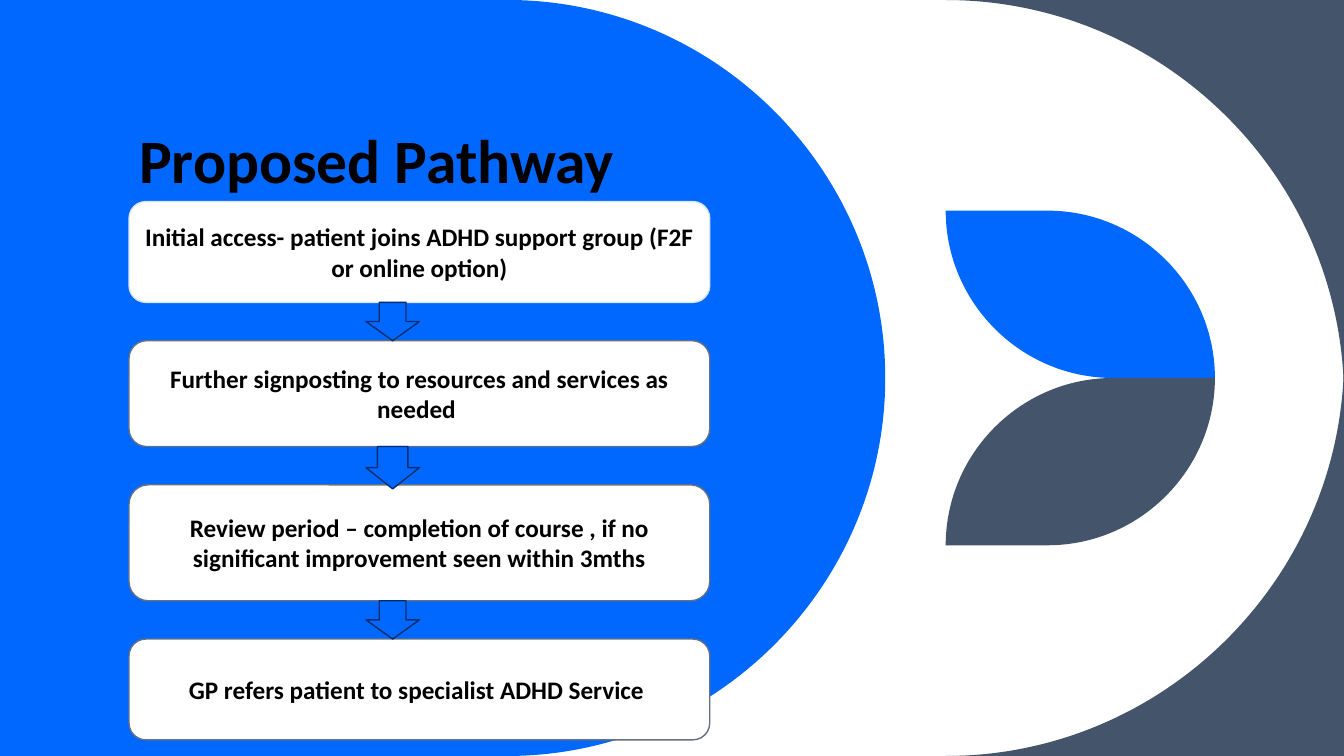
from lxml import etree
from pptx import Presentation
from pptx.dml.color import RGBColor
from pptx.enum.shapes import MSO_SHAPE as SHAPE
from pptx.enum.text import MSO_ANCHOR as ANCHOR, MSO_AUTO_SIZE as AUTO_SIZE, PP_ALIGN as ALIGN
from pptx.oxml.ns import qn
from pptx.util import Inches, Pt

WIDTH, HEIGHT = 13.33, 7.5
MIDDLE = HEIGHT / 2
ROUNDNESS = 0.55  # share of the way to the corner that makes a curve a quarter circle
BLUE, SLATE, WHITE, BLACK = "0068FF", "44546A", "FFFFFF", "000000"
PALE_EDGE, GREY_EDGE, NAVY_EDGE = "DAE5EF", "637183", "002E70"

# Text, height and outline of each step
STEPS = [
    ("Initial access- patient joins ADHD support group (F2F or online option)", 1, PALE_EDGE),
    ("Further signposting to resources and services as needed ", 1.05, GREY_EDGE),
    ("Review period – completion of course , if no significant improvement seen within 3mths",
     1.15, GREY_EDGE),
    ("GP refers patient to specialist ADHD Service ", 1, GREY_EDGE),
]
# Extra length and shaft share of the arrow after each step
ARROWS = [(0, 0.5), (0.04, 0.57), (0, 0.5)]


def color(value):
    return RGBColor.from_string(value)


def paint(shape, fill, line=None):
    shape.shadow.inherit = False
    shape.fill.solid()
    shape.fill.fore_color.rgb = color(fill)
    if line:
        shape.line.color.rgb = color(line)
        shape.line.width = Pt(1)
    else:
        shape.line.fill.background()


def write(shape, text, size=18, align=ALIGN.CENTER, anchor=ANCHOR.MIDDLE, spacing=1.0):
    frame = shape.text_frame
    frame.word_wrap = True
    frame.auto_size = AUTO_SIZE.NONE
    frame.vertical_anchor = anchor
    paragraph = frame.paragraphs[0]
    paragraph.alignment = align
    paragraph.line_spacing = spacing
    run = paragraph.add_run()
    run.text = text
    font = run.font
    font.name, font.size, font.bold = "Calibri", Pt(size), True
    font.color.rgb = color(BLACK)


def place(shape, left, top, width, height):
    shape.left, shape.top = Inches(left), Inches(top)
    shape.width, shape.height = Inches(width), Inches(height)


def add_box(slide, kind, left, top, width, height, fill, line):
    shape = slide.shapes.add_shape(kind, *map(Inches, (left, top, width, height)))
    paint(shape, fill, line)
    return shape


def quarter(start, corner, end):
    """Two control points and the end of a quarter circle that bulges to the corner."""
    controls = [tuple(a + ROUNDNESS * (b - a) for a, b in zip(point, corner))
                for point in (start, end)]
    return [*controls, end]


def add_outline(slide, start, segments, fill):
    """Each segment is one point for a line, or three for a curve."""
    points = [(Inches(x), Inches(y)) for segment in segments for x, y in segment]
    builder = slide.shapes.build_freeform(Inches(start[0]), Inches(start[1]))
    builder.add_line_segments(points, close=True)
    shape = builder.convert_to_shape()
    paint(shape, fill)

    lines = iter(list(shape.element.iter(qn("a:lnTo"))))
    for segment in segments:
        first, *others = [next(lines) for _ in segment]
        if others:
            curve = etree.Element(qn("a:cubicBezTo"))
            first.addprevious(curve)
            for line in (first, *others):
                curve.append(line[0])
                line.getparent().remove(line)


def mirror(points):
    return [(x, HEIGHT - y) for x, y in points]


def draw_backdrop(slide, left, radius=3.95, leaf_radius=1.66, leaf_width=2.67):
    """Blue half-round panel, two leaves and two corners; left starts the leaves."""
    shoulder, edge = 5.03, 8.78
    add_outline(slide, (0, 0), [
        [(shoulder, 0)],
        quarter((shoulder, 0), (edge, 0), (edge, MIDDLE)),
        quarter((edge, MIDDLE), (edge, HEIGHT), (shoulder, HEIGHT)),
        [(0, HEIGHT)],
    ], BLUE)

    right, top = left + leaf_width, MIDDLE - leaf_radius
    bend, tip = (right - leaf_radius, top), (left + leaf_radius, MIDDLE)
    leaf = (left, top), [
        [bend],
        quarter(bend, (right, top), (right, MIDDLE)),
        [tip],
        quarter(tip, (left, MIDDLE), (left, top)),
    ]
    corner = (WIDTH, 0), [
        [(left, 0)],
        quarter((left, 0), (WIDTH, 0), (WIDTH, radius)),
    ]
    for (start, segments), top_fill in ((leaf, BLUE), (corner, SLATE)):
        add_outline(slide, start, segments, top_fill)
        add_outline(slide, *mirror([start]), [mirror(segment) for segment in segments], SLATE)


def draw_title(slide, left, top, width, height):
    title = slide.shapes.title
    place(title, left, top, width, height)
    write(title, "Proposed Pathway", size=44, align=ALIGN.LEFT, anchor=ANCHOR.BOTTOM, spacing=0.9)
    title.element.getparent().append(title.element)  # bring above the backdrop


def draw_pathway(slide, left, top, width, gap=0.38, arrow_width=0.53):
    arrow_left = left + 2.35
    arrow_tops = []
    for text, height, edge in STEPS:
        step = add_box(slide, SHAPE.ROUNDED_RECTANGLE, left, top, width, height, WHITE, edge)
        write(step, text)
        arrow_tops.append(top + height)
        top += height + gap
    for arrow_top, (extra, shaft) in zip(arrow_tops, ARROWS):
        arrow = add_box(slide, SHAPE.DOWN_ARROW, arrow_left, arrow_top, arrow_width, gap + extra,
                        BLUE, NAVY_EDGE)
        arrow.adjustments[0] = shaft


def main():
    presentation = Presentation()
    presentation.slide_width, presentation.slide_height = Inches(WIDTH), Inches(HEIGHT)
    slide = presentation.slides.add_slide(presentation.slide_layouts.get_by_name("Title Only"))
    draw_backdrop(slide, left=9.38)
    draw_title(slide, 1.28, 1.16, 6.83, 0.84)
    draw_pathway(slide, left=1.28, top=2, width=5.76)
    presentation.save("out.pptx")


if __name__ == "__main__":
    main()
